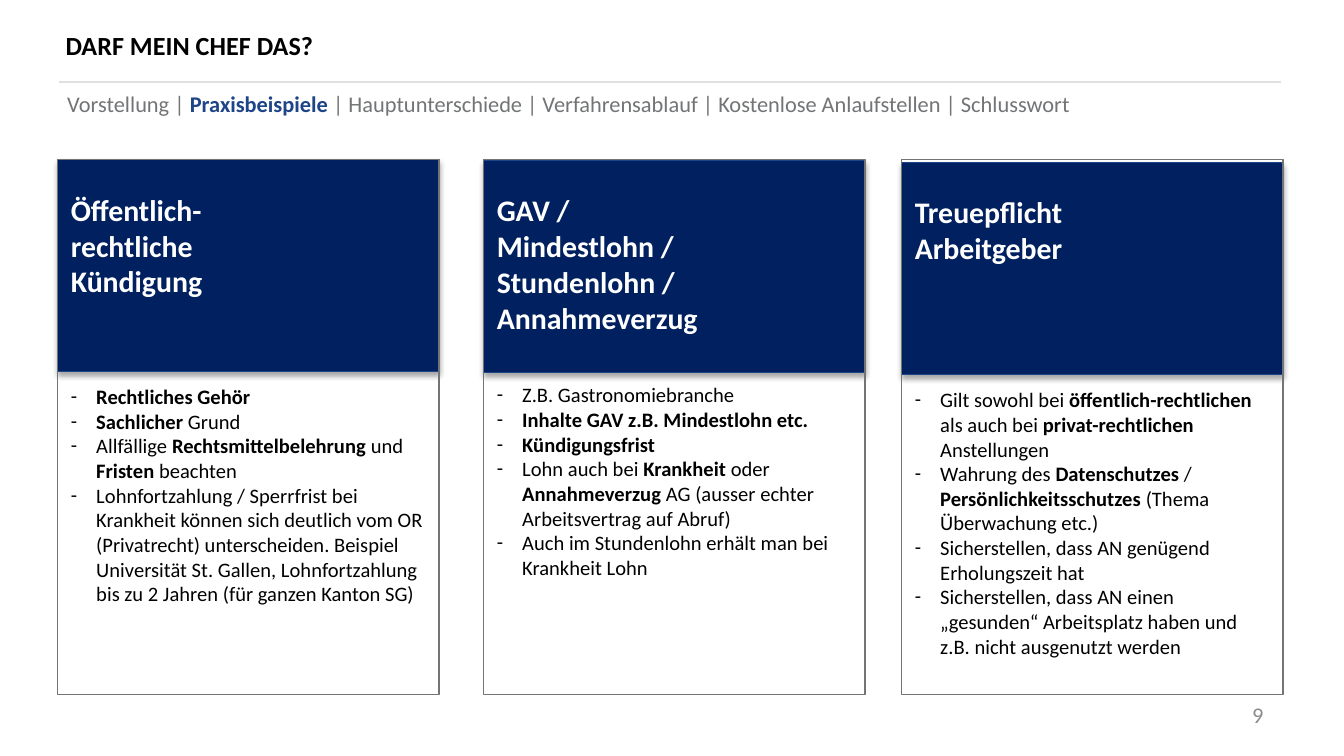
from lxml.etree import SubElement
from pptx import Presentation
from pptx.dml.color import RGBColor
from pptx.enum.shapes import MSO_CONNECTOR, MSO_SHAPE
from pptx.enum.text import MSO_ANCHOR, PP_ALIGN
from pptx.oxml.ns import qn
from pptx.util import Cm, Pt

BLACK = RGBColor(0x00, 0x00, 0x00)
WHITE = RGBColor(0xFF, 0xFF, 0xFF)
NAVY = RGBColor(0x00, 0x20, 0x60)
BLUE = RGBColor(0x1E, 0x45, 0x87)
GRAY = RGBColor(0x72, 0x74, 0x76)
PAGE_GRAY = RGBColor(0x8C, 0x8C, 0x8C)
RULE_GRAY = RGBColor(0xE0, 0xE0, 0xE0)

COLUMN_WIDTH = 7.21
COLUMN_TOP = 3.02
HEADER_HEIGHT = 4.01
BODY_HEIGHT = 10.11

COLUMNS = [
    (1.09, 3.02, 4.24, ["Öffentlich-", "rechtliche", "Kündigung"], [
        "*Rechtliches Gehör*",
        "*Sachlicher* Grund",
        "Allfällige *Rechtsmittelbelehrung* und *Fristen* beachten",
        "Lohnfortzahlung / Sperrfrist bei Krankheit können sich deutlich vom OR "
        "(Privatrecht) unterscheiden. Beispiel Universität St. Gallen, "
        "Lohnfortzahlung bis zu 2 Jahren (für ganzen Kanton SG)",
    ]),
    (9.14, 3.03, 4.21, ["GAV /", "Mindestlohn /", "Stundenlohn /", "Annahmeverzug"], [
        "Z.B. Gastronomiebranche",
        "*Inhalte GAV z.B. Mindestlohn etc.*",
        "*Kündigungsfrist*",
        "Lohn auch bei *Krankheit* oder *Annahmeverzug* AG "
        "(ausser echter Arbeitsvertrag auf Abruf)",
        "Auch im Stundenlohn erhält man bei Krankheit Lohn",
    ]),
    (17.04, 3.07, 4.3, ["Treuepflicht", "Arbeitgeber"], [
        "Gilt sowohl bei *öffentlich-rechtlichen* als auch bei "
        "*privat-rechtlichen* Anstellungen",
        "Wahrung des *Datenschutzes* / *Persönlichkeitsschutzes* "
        "(Thema Überwachung etc.)",
        "Sicherstellen, dass AN genügend Erholungszeit hat",
        "Sicherstellen, dass AN einen „gesunden“ Arbeitsplatz haben "
        "und z.B. nicht ausgenutzt werden",
    ]),
]


class SlideBuilder:
    font_name = "Calibri"
    line_width = Pt(0.75)

    def __init__(self, deck):
        self.slide = deck.slides.add_slide(deck.slide_layouts[5])

    def style(self, span, size, color, bold=False):
        span.font.name = self.font_name
        span.font.size = Pt(size)
        span.font.color.rgb = color
        span.font.bold = bold

    def add_spans(self, para, text, size, color, strong_color):
        for index, part in enumerate(text.split("*")):
            if part:
                span = para.add_run()
                span.text = part
                strong = index % 2 == 1
                self.style(span, size, strong_color if strong else color, strong)

    def title(self, text, left, top, width, height):
        box = self.slide.shapes.title
        box.left, box.top, box.width, box.height = map(Cm, (left, top, width, height))
        frame = box.text_frame
        frame.text = text
        frame.vertical_anchor = MSO_ANCHOR.MIDDLE
        frame.margin_left = frame.margin_right = 0
        frame.margin_top = frame.margin_bottom = 0
        para = frame.paragraphs[0]
        para.alignment = PP_ALIGN.LEFT
        self.style(para.runs[0], 14, BLACK, True)

    def rule(self, left, right, top):
        line = self.slide.shapes.add_connector(
            MSO_CONNECTOR.STRAIGHT, Cm(left), Cm(top), Cm(right), Cm(top))
        line.line.color.rgb = RULE_GRAY
        line.line.width = self.line_width
        SubElement(line._element.spPr, qn("a:effectLst"))

    def text(self, text, left, top, width, height, color, align=PP_ALIGN.LEFT):
        box = self.slide.shapes.add_textbox(Cm(left), Cm(top), Cm(width), Cm(height))
        frame = box.text_frame
        frame.word_wrap = True
        frame.vertical_anchor = MSO_ANCHOR.MIDDLE
        frame.paragraphs[0].alignment = align
        self.add_spans(frame.paragraphs[0], text, 12, color, BLUE)

    def panel(self, left, top, height, line_color, text_top):
        box = self.slide.shapes.add_shape(
            MSO_SHAPE.RECTANGLE, Cm(left), Cm(top), Cm(COLUMN_WIDTH), Cm(height))
        box.shadow.inherit = False
        box.fill.background()
        box.line.color.rgb = line_color
        box.line.width = self.line_width
        frame = box.text_frame
        frame.word_wrap = True
        frame.vertical_anchor = MSO_ANCHOR.TOP
        frame.margin_top = Cm(text_top)
        return box

    def header(self, left, top, lines):
        box = self.panel(left, top, HEADER_HEIGHT, BLUE, 0.6)
        box.fill.solid()
        box.fill.fore_color.rgb = NAVY
        effects = box._element.spPr.find(qn("a:effectLst"))
        shadow = SubElement(effects, qn("a:outerShdw"), blurRad=str(Pt(3.1)),
                            dist=str(Pt(1.8)), dir="5400000", rotWithShape="0")
        color = SubElement(shadow, qn("a:srgbClr"), val=str(BLACK))
        SubElement(color, qn("a:alpha"), val="35000")
        box.text_frame.text = "\n".join(lines)
        for para in box.text_frame.paragraphs:
            para.alignment = PP_ALIGN.LEFT
            self.style(para.runs[0], 16, WHITE, True)

    def body(self, left, text_top, items):
        frame = self.panel(left, COLUMN_TOP, BODY_HEIGHT, GRAY, text_top).text_frame
        for index, item in enumerate(items):
            para = frame.add_paragraph() if index else frame.paragraphs[0]
            para.alignment = PP_ALIGN.LEFT
            properties = para._p.get_or_add_pPr()
            properties.set("marL", str(Cm(0.48)))
            properties.set("indent", str(Cm(-0.48)))
            SubElement(properties, qn("a:buFont"), typeface=self.font_name)
            SubElement(properties, qn("a:buChar"), char="-")
            self.add_spans(para, item, 11, BLACK, BLACK)


def main():
    deck = Presentation()
    deck.slide_width, deck.slide_height = Cm(25.4), Cm(14.29)
    page = SlideBuilder(deck)
    page.rule(1.12, 24.21, 1.55)
    page.title("DARF MEIN CHEF DAS?", 1.24, 0.36, 16.94, 0.99)
    page.text("Vorstellung | *Praxisbeispiele* | Hauptunterschiede | Verfahrensablauf | "
              "Kostenlose Anlaufstellen | Schlusswort", 1.02, 1.58, 22.89, 0.77, GRAY)
    for left, header_top, text_top, lines, items in COLUMNS:
        page.header(left, header_top, lines)
        page.body(left, text_top, items)
    page.text("9", 18.21, 13.13, 5.92, 0.76, PAGE_GRAY, PP_ALIGN.RIGHT)
    deck.save("out.pptx")


if __name__ == "__main__":
    main()
